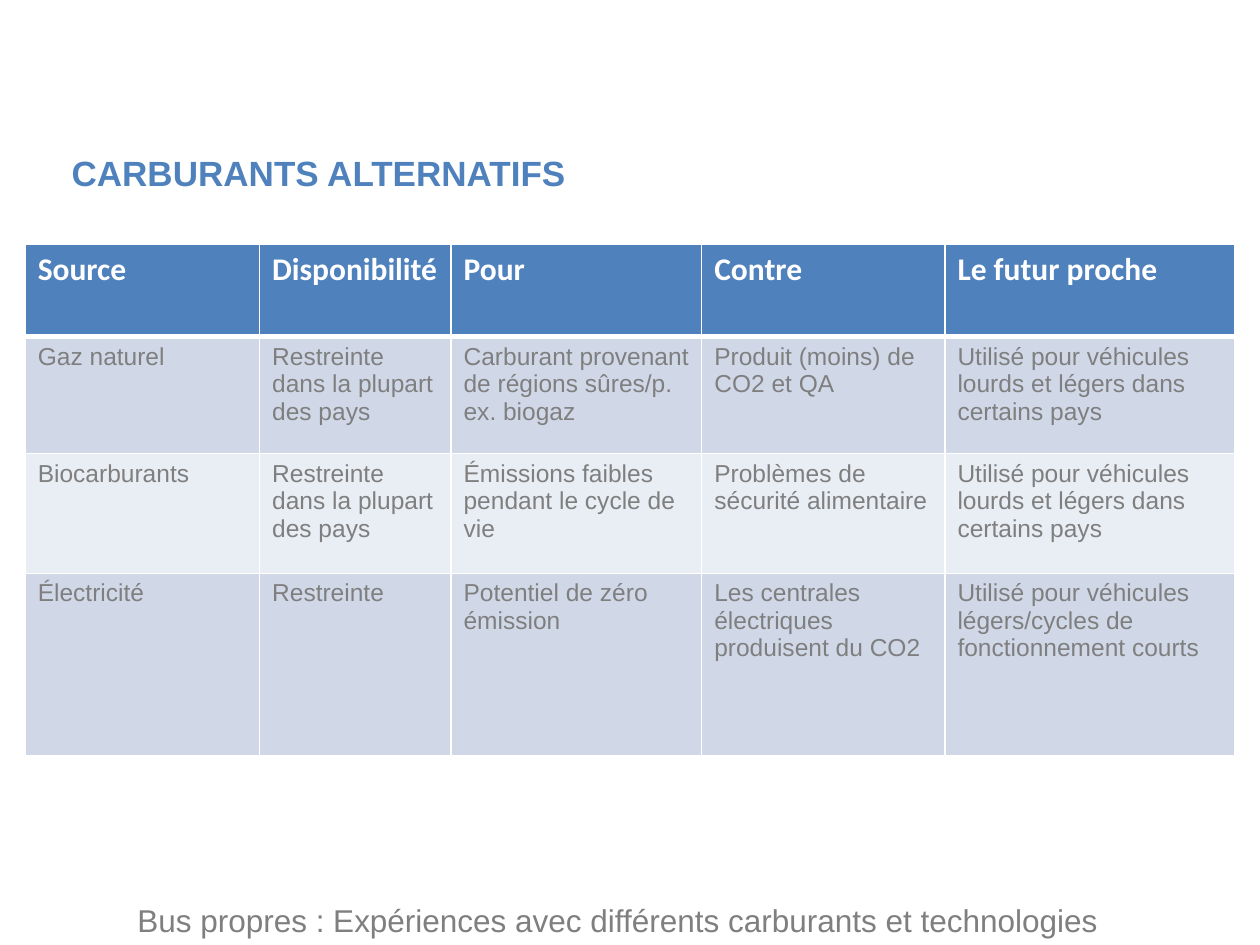
from lxml import etree
from pptx import Presentation
from pptx import util as u
from pptx.dml.color import RGBColor
from pptx.enum import text
from pptx.oxml.ns import qn

COLORS = {
    "accent": "4F81BD",
    "band_dark": "D0D8E8",
    "band_light": "E9EDF4",
    "body": "7F7F7F",
    "white": "FFFFFF",
}

COLUMN_WIDTHS = [1.86, 1.52, 1.99, 1.93, 2.3]
ROW_HEIGHTS = [0.73, 0.93, 0.95, 1.45]
FUELS = [
    ["Source", "Disponibilité", "Pour", "Contre", "Le futur proche"],
    ["Gaz naturel", "Restreinte dans la plupart des pays",
     "Carburant provenant de régions sûres/p. ex. biogaz",
     "Produit (moins) de CO2 et QA",
     "Utilisé pour véhicules lourds et légers dans certains pays"],
    ["Biocarburants", "Restreinte dans la plupart des pays",
     "Émissions faibles pendant le cycle de vie",
     "Problèmes de sécurité alimentaire",
     "Utilisé pour véhicules lourds et légers dans certains pays"],
    ["Électricité", "Restreinte", "Potentiel de zéro émission",
     "Les centrales électriques produisent du CO2",
     "Utilisé pour véhicules légers/cycles de fonctionnement courts"],
]


class SlideBuilder:
    """Holds the shared style and the current slide."""

    def __init__(self, slide):
        self.slide = slide

    def color(self, name):
        return RGBColor.from_string(COLORS[name])

    def set_text(self, frame, wording, size, color, bold=False, font="Arial"):
        frame.text = wording
        for run in frame.paragraphs[0].runs:
            run.font.name = font
            run.font.size = u.Pt(size)
            run.font.bold = bold
            run.font.color.rgb = self.color(color)

    def label(self, wording, box, size, color, bold=False,
              anchor=text.MSO_ANCHOR.TOP, indent=0.1):
        frame = self.slide.shapes.add_textbox(*map(u.Inches, box)).text_frame
        frame.word_wrap = True
        frame.vertical_anchor = anchor
        frame.margin_left = u.Inches(indent)
        self.set_text(frame, wording, size, color, bold)

    def border(self, cell, side, width):
        line = etree.SubElement(cell._tc.get_or_add_tcPr(), qn(f"a:ln{side}"),
                                w=str(u.Pt(width)))
        fill = etree.SubElement(line, qn("a:solidFill"))
        etree.SubElement(fill, qn("a:srgbClr"), val=COLORS["white"])

    def table(self, rows, left, top, widths, heights):
        table = self.slide.shapes.add_table(
            len(rows), len(widths), u.Inches(left), u.Inches(top),
            u.Inches(sum(widths)), u.Inches(sum(heights))).table
        for column, width in zip(table.columns, widths):
            column.width = u.Inches(width)
        for r, (row, height) in enumerate(zip(rows, heights)):
            table.rows[r].height = u.Inches(height)
            for c, wording in enumerate(row):
                self.cell(table.cell(r, c), wording, r)

    def cell(self, cell, wording, row):
        # Header, then alternating bands; a thick rule parts the two
        if row == 0:
            fill = "accent"
            self.set_text(cell.text_frame, wording, 18, "white", True, "Calibri")
        else:
            fill = "band_dark" if row % 2 else "band_light"
            self.set_text(cell.text_frame, wording, 14, "body")
        for side in "LRTB":
            thick = (row, side) in [(0, "B"), (1, "T")]
            self.border(cell, side, 3 if thick else 1)
        cell.fill.solid()
        cell.fill.fore_color.rgb = self.color(fill)


def main():
    deck = Presentation()
    deck.slide_width, deck.slide_height = u.Inches(10), u.Inches(7.5)
    builder = SlideBuilder(deck.slides.add_slide(deck.slide_layouts[6]))

    # Title
    builder.label("CARBURANTS ALTERNATIFS", (0.47, 1.15, 8.86, 0.71),
                  20, "accent", bold=True)

    # Comparison of fuels
    builder.table(FUELS, 0.2, 1.94, COLUMN_WIDTHS, ROW_HEIGHTS)

    # Footer line
    builder.label(
        "Bus propres : Expériences avec différents carburants et technologies",
        (0.42, 6.66, 9.37, 0.84), 18, "body",
        anchor=text.MSO_ANCHOR.BOTTOM, indent=0.67)

    deck.save("out.pptx")


if __name__ == "__main__":
    main()
